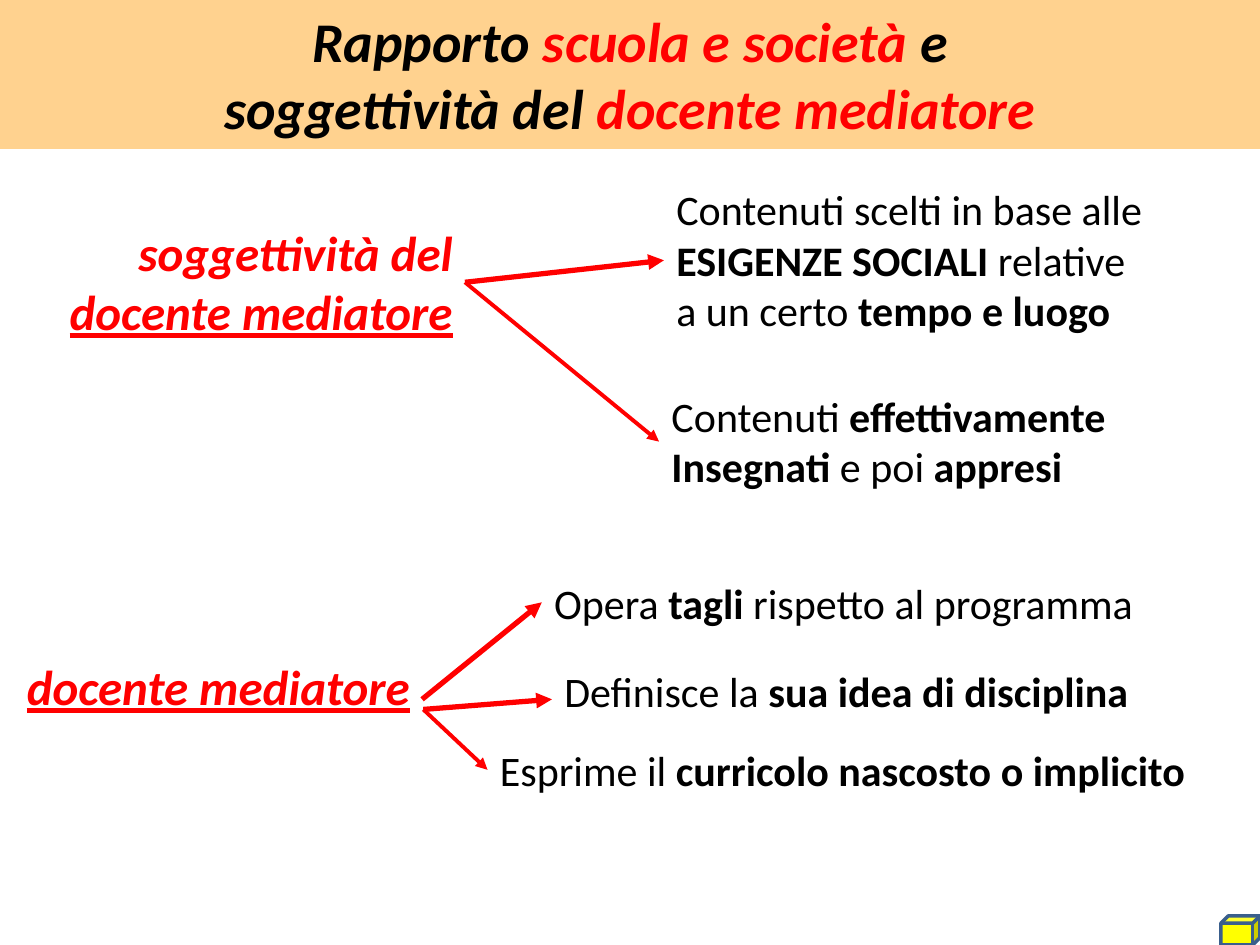
from lxml.etree import SubElement as Sub
from pptx import Presentation
from pptx.dml.color import RGBColor as Rgb
from pptx.enum.shapes import MSO_CONNECTOR as Conn, MSO_SHAPE as Kind
from pptx.enum.text import MSO_ANCHOR as Anchor, MSO_AUTO_SIZE as Auto, PP_ALIGN as Align
from pptx.oxml.ns import qn
from pptx.util import Pt

RED, BLACK = "FF0000", "000000"
RIGHT, LEFT = 3, 1  # connection sites


def paint(target, tint):
    """Set a solid colour on a fill."""
    target.solid()
    target.fore_color.rgb = Rgb.from_string(tint)


def write(frame, lines, size, align=Align.LEFT, slant=False):
    """Fill a frame; each line is a list of (text, colour, marks) runs."""
    frame.word_wrap = True
    frame.auto_size = Auto.SHAPE_TO_FIT_TEXT
    frame.vertical_anchor = Anchor.TOP
    for i, runs in enumerate(lines):
        para = frame.add_paragraph() if i else frame.paragraphs[0]
        para.alignment = align
        para.space_before = Pt(0)
        for text, tint, marks in runs:
            run = para.add_run()
            run.text = text
            font = run.font
            font.name, font.size = "Calibri", Pt(size)
            font.bold, font.italic = "b" in marks, slant
            font.underline = "u" in marks
            paint(font.fill, tint)


def place(shape, box):
    shape.left, shape.top, shape.width, shape.height = map(Pt, box)


def add_title(slide):
    title = slide.shapes.title
    place(title, (0, 0, 720, 85))
    paint(title.fill, "FF9900")
    tint = title.fill._xPr.find(qn("a:solidFill"))[0]
    Sub(tint, qn("a:alpha"), val="44000")
    write(title.text_frame, [
        [("Rapporto ", BLACK, "b"), ("scuola e società ", RED, "b"), ("e", BLACK, "b")],
        [("soggettività del ", BLACK, "b"), ("docente mediatore", RED, "b")],
    ], 32, Align.CENTER, True)


def add_cube(slide):
    cube = slide.shapes.add_shape(Kind.CUBE, *map(Pt, (697.7, 523.4, 22.3, 16.6)))
    cube.shadow.inherit = False
    paint(cube.fill, "FFFF00")
    paint(cube.line.fill, "3A5F8C")
    cube.line.width = Pt(2)


def add_topic(group, box, lines):
    """Red heading on the left."""
    topic = group.shapes.add_textbox(*map(Pt, box))
    write(topic.text_frame, [[(text, RED, marks)] for text, marks in lines],
          28, Align.RIGHT, True)
    return topic


def add_note(group, box, lines):
    """Black text on the right."""
    note = group.shapes.add_textbox(*map(Pt, box))
    write(note.text_frame,
          [[(text, BLACK, marks) for text, marks in runs] for runs in lines], 24)
    return note


def add_arrow(group, start, end, width, head=None, tail=None):
    """Red arrow, joined to the shapes head and tail where given."""
    arrow = group.shapes.add_connector(Conn.STRAIGHT, *map(Pt, (*start, *end)))
    if head is not None:
        arrow.begin_connect(head, RIGHT)
    if tail is not None:
        arrow.end_connect(tail, LEFT)
    paint(arrow.line.fill, RED)
    arrow.line.width = Pt(width)
    Sub(arrow.line._get_or_add_ln(), qn("a:tailEnd"), type="triangle")
    Sub(arrow._element.spPr, qn("a:effectLst"))


def add_choice(slide):
    """Upper diagram: the contents that are chosen and taught."""
    group = slide.shapes.add_group_shape()
    topic = add_topic(group, (0, 123.8, 265.7, 75),
                      [("soggettività del", "b"), ("docente mediatore", "bu")])
    needs = add_note(group, (379.4, 101.5, 283.7, 94.5), [
        [("Contenuti scelti in base alle", "")],
        [("ESIGENZE SOCIALI ", "b"), ("relative", "")],
        [("a un certo", ""), (" tempo e luogo", "b")],
    ])
    taught = add_note(group, (376.6, 219.6, 272.2, 65.5), [
        [("Contenuti ", ""), ("effettivamente", "b")],
        [("Insegnati ", "b"), ("e poi ", ""), ("appresi", "b")],
    ])
    start = (265.7, 161.3)
    add_arrow(group, start, (379.4, 148.7), 3, topic, needs)
    add_arrow(group, start, (376.6, 252.4), 2.25, topic, taught)


def add_acts(slide):
    """Lower diagram: what the teacher does."""
    group = slide.shapes.add_group_shape()
    add_topic(group, (0, 371.5, 241.2, 41), [("docente mediatore", "bu")])
    cuts = add_note(group, (309.6, 326.2, 362.2, 36),
                    [[("Opera", ""), (" tagli ", "b"), ("rispetto al programma", "")]])
    hidden = add_note(group, (278.6, 421.9, 441.4, 36),
                      [[("Esprime il ", ""), ("curricolo nascosto o implicito", "b")]])
    add_note(group, (315.4, 376.6, 357.1, 36),
             [[("Definisce la ", ""), ("sua idea di disciplina", "b")]])
    start = (241.9, 405.4)
    add_arrow(group, (241.2, 399.6), (309.6, 344.2), 3, tail=cuts)
    add_arrow(group, start, (278.6, 439.9), 2.25, tail=hidden)
    add_arrow(group, start, (315.4, 399.6), 3)


def main():
    deck = Presentation()
    deck.slide_width, deck.slide_height = Pt(720), Pt(540)
    slide = deck.slides.add_slide(deck.slide_layouts[5])
    add_title(slide)
    add_cube(slide)
    add_choice(slide)
    add_acts(slide)
    deck.save("out.pptx")


if __name__ == "__main__":
    main()
